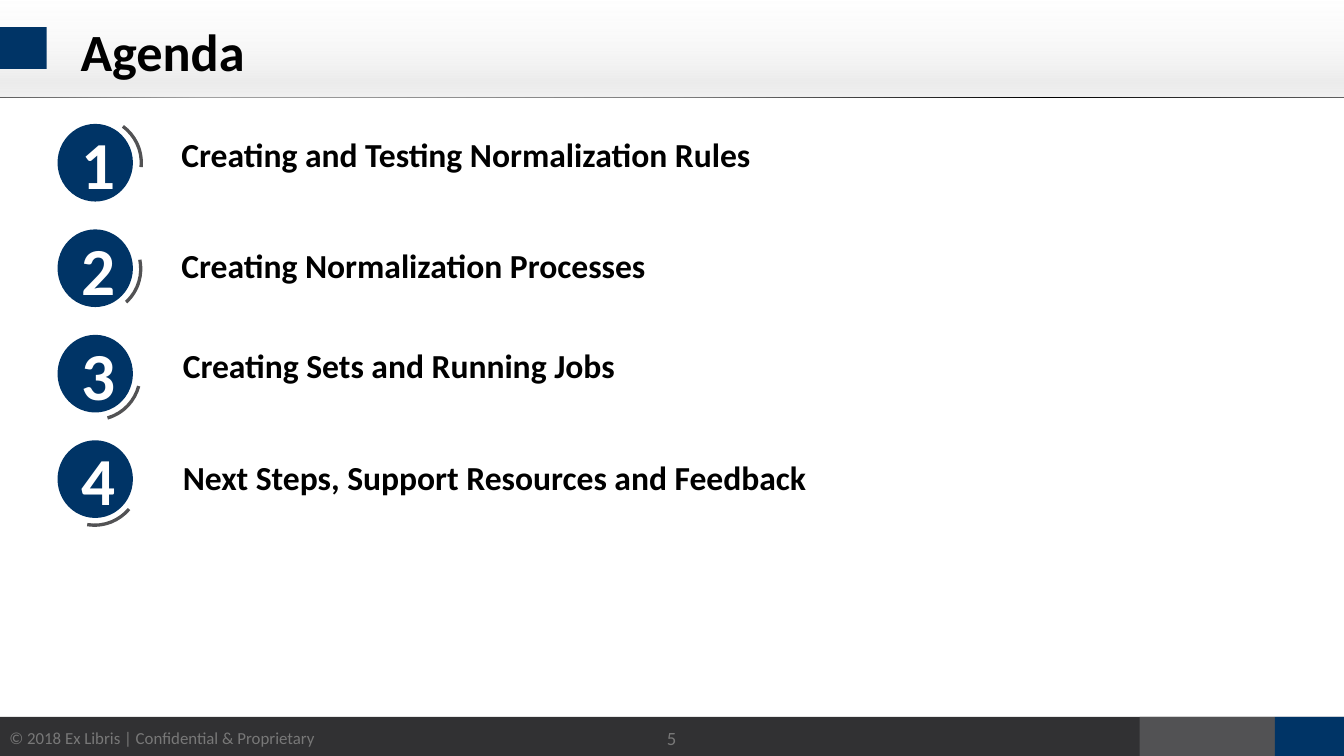
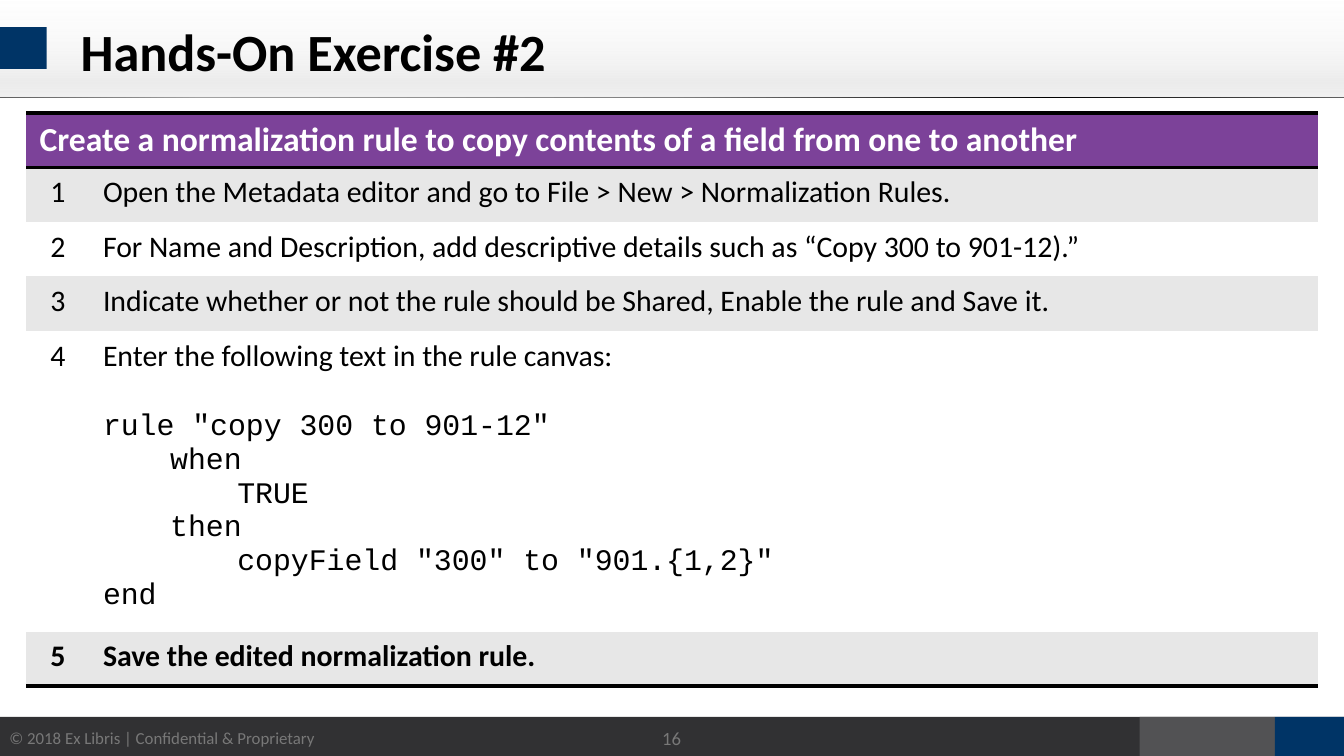
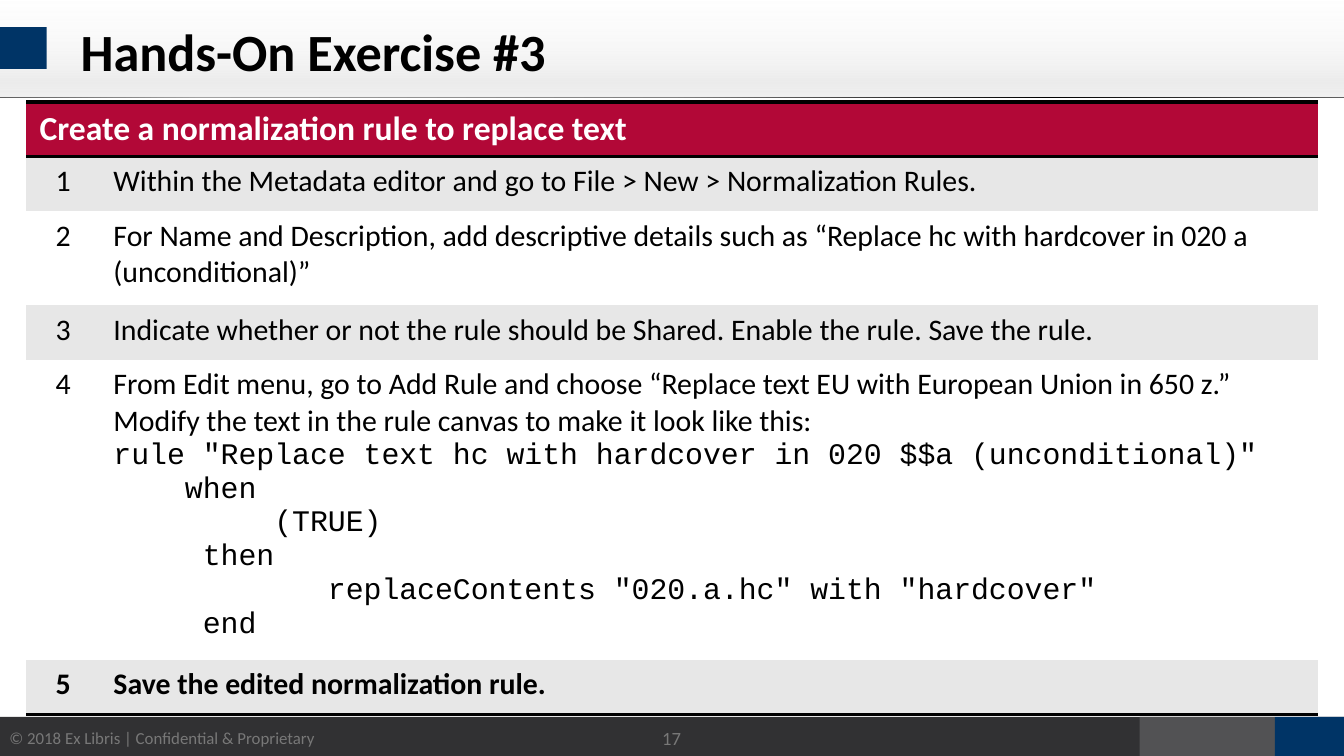
from lxml import etree
from pptx import Presentation
from pptx.dml.color import RGBColor
from pptx.enum.shapes import MSO_SHAPE
from pptx.enum.text import MSO_ANCHOR, MSO_AUTO_SIZE, PP_ALIGN
from pptx.oxml.ns import qn
from pptx.util import Pt

RECT, OVAL, ARC = MSO_SHAPE.RECTANGLE, MSO_SHAPE.OVAL, MSO_SHAPE.BLOCK_ARC
LEFT, CENTER = PP_ALIGN.LEFT, PP_ALIGN.CENTER
TOP, MIDDLE = MSO_ANCHOR.TOP, MSO_ANCHOR.MIDDLE
NO_FIT, GROW = MSO_AUTO_SIZE.NONE, MSO_AUTO_SIZE.SHAPE_TO_FIT_TEXT

SANS, MONO = "Calibri", "Courier New"
NAVY, CHARCOAL, GRAY, MUTED = "003466", "313133", "525254", "787878"
BLACK, WHITE, STRIPE = "000000", "FFFFFF", "E7E7E7"
PURPLE, CRIMSON = "7C4299", "B20837"
NO_TABLE_STYLE = "{2D5ABB26-0587-4C30-8999-92F81FD0307C}"

# Gradient stops: position %, colour, opacity %
HEADER_STOPS = [(0, "FAFAFA", 12), (66, "D7D7D7", 30),
                (83, "D7D7D7", 47), (100, "E4E4E4", 54)]
RULE_STOPS = [(0, "606060", 100), (22, BLACK, 100), (50, "808080", 100),
              (85, "A0A0A0", 100), (100, "606060", 100)]


def rgb(color):
    return RGBColor.from_string(color)


class Deck:
    def __init__(self):
        self.prs = Presentation()
        self.prs.slide_width, self.prs.slide_height = Pt(720), Pt(405)
        self.layout = self.prs.slide_layouts[5]
        self.s = None

    def slide(self, title, number):
        first = self.s is None
        self.s = self.prs.slides.add_slide(self.layout)
        if first:
            self.frame()
        sp = self.s.shapes.title
        sp.left, sp.top, sp.width, sp.height = Pt(36), Pt(4.5), Pt(653), Pt(45)
        tf = sp.text_frame
        tf.text = title
        tf.auto_size, tf.vertical_anchor = NO_FIT, MIDDLE
        self.style(tf.paragraphs[0], 28, BLACK, True)
        self.text(number, 338.5, 381, 42.5, 29, 10, MUTED, align=CENTER)

    def frame(self):
        """Draw the shared bands and footer, and hand them to the layout."""
        parts = [
            self.shape(RECT, 0, 384, 720, 23, CHARCOAL),
            self.shape(RECT, 610.5, 384, 72.5, 23, GRAY),
            self.shape(RECT, 683, 384, 37, 23, NAVY),
            self.gradient(self.shape(RECT, -0.5, 0.5, 721, 52), HEADER_STOPS, 90),
            self.shape(RECT, 0, 14.5, 25, 22.5, NAVY),
            self.gradient(self.shape(RECT, 0, 52, 720, 0.6), RULE_STOPS, 180),
        ]
        sp = self.text("© 2018 Ex Libris | Confidential & Proprietary",
                       -3, 386, 179.5, 18, 9, MUTED, align=CENTER)
        sp.text_frame.word_wrap, sp.text_frame.auto_size = False, GROW
        for i, part in enumerate(parts + [sp]):
            next(part._element.iter(qn("p:cNvPr"))).set("id", str(100 + i))
            self.layout.shapes._spTree.append(part._element)

    def style(self, p, size, color, bold=False, align=LEFT, font=SANS):
        p.alignment = align
        for r in p.runs:
            f = r.font
            f.name, f.size, f.bold = font, Pt(size), bold
            f.color.rgb = rgb(color)

    def shape(self, kind, x, y, w, h, fill=None):
        sp = self.s.shapes.add_shape(kind, Pt(x), Pt(y), Pt(w), Pt(h))
        sp.shadow.inherit = False
        sp.line.fill.background()
        if fill:
            sp.fill.solid()
            sp.fill.fore_color.rgb = rgb(fill)
        return sp

    def gradient(self, sp, stops, angle):
        grad = etree.Element(qn("a:gradFill"), rotWithShape="1")
        gs_list = etree.SubElement(grad, qn("a:gsLst"))
        for pos, color, opacity in stops:
            gs = etree.SubElement(gs_list, qn("a:gs"), pos=str(pos * 1000))
            clr = etree.SubElement(gs, qn("a:srgbClr"), val=color)
            etree.SubElement(clr, qn("a:alpha"), val=str(opacity * 1000))
        etree.SubElement(grad, qn("a:lin"), ang=str(angle * 60000), scaled="0")
        sp._element.spPr.find(qn("a:prstGeom")).addnext(grad)
        return sp

    def text(self, text, x, y, w, h, size, color, bold=False, align=LEFT, inset=None):
        sp = self.s.shapes.add_textbox(Pt(x), Pt(y), Pt(w), Pt(h))
        tf = sp.text_frame
        tf.text = text
        tf.word_wrap, tf.vertical_anchor = True, MIDDLE
        if inset is not None:
            tf.margin_left = tf.margin_right = Pt(inset)
            tf.margin_top = tf.margin_bottom = Pt(inset)
        self.style(tf.paragraphs[0], size, color, bold, align)
        return sp

    def badge(self, number, y, turn):
        """Numbered disc with a white rim and a short arc around it."""
        self.shape(OVAL, 27.4, y, 46.8, 47.5, WHITE)
        arc = self.shape(ARC, 25, y - 1.4, 51.6, 50.4, GRAY)
        for i, value in enumerate((181.725, 0.424, 0.035)):
            arc.adjustments[i] = value
        arc.rotation = turn
        disc = self.shape(OVAL, 30.8, y + 3.2, 40.4, 41.6, NAVY)
        disc.text_frame.text = str(number)
        self.style(disc.text_frame.paragraphs[0], 36, WHITE, True, CENTER)

    def border(self, cell, *sides):
        tc_pr = cell._tc.get_or_add_tcPr()
        for i, side in enumerate(sides):
            ln = etree.Element(qn("a:" + side), w=str(Pt(2)))
            fill = etree.SubElement(ln, qn("a:solidFill"))
            etree.SubElement(fill, qn("a:srgbClr"), val=BLACK)
            tc_pr.insert(i, ln)

    def cell(self, cell, text, fill, size=16, color=BLACK, bold=False, align=LEFT):
        cell.fill.solid()
        cell.fill.fore_color.rgb = rgb(fill)
        cell.vertical_anchor = TOP
        cell.text_frame.text = text
        self.style(cell.text_frame.paragraphs[0], size, color, bold, align)

    def code(self, cell, lines, gap):
        """Add code lines (level, text) below the cell's first paragraph."""
        for i, (level, line) in enumerate(lines):
            p = cell.text_frame.add_paragraph()
            p.text, p.level = line, level
            p._p.get_or_add_pPr().set("marL", str(Pt(36 * level)))
            p._p.get_or_add_pPr().set("indent", "0")
            if i == 0 and gap:
                p.space_before = Pt(gap)
            self.style(p, 16, BLACK, font=MONO)

    def exercise(self, heading, color, steps, code, y, number_width, heights, gap=0):
        """Table of numbered steps; the code belongs to the step before the last."""
        last = len(steps)
        tbl = self.s.shapes.add_table(last + 1, 2, Pt(14), Pt(y), Pt(692),
                                      Pt(sum(heights))).table
        tbl.first_row = tbl.horz_banding = False
        tbl._tbl.tblPr.find(qn("a:tableStyleId")).text = NO_TABLE_STYLE
        tbl.columns[0].width = Pt(number_width)
        tbl.columns[1].width = Pt(692 - number_width)
        for row, height in zip(tbl.rows, heights):
            row.height = Pt(height)
        self.cell(tbl.cell(0, 0), heading, color, 18, WHITE, True)
        tbl.cell(0, 0).merge(tbl.cell(0, 1))
        for n, step in enumerate(steps, 1):
            fill = STRIPE if n % 2 else WHITE
            self.cell(tbl.cell(n, 0), str(n), fill, bold=n == last, align=CENTER)
            self.cell(tbl.cell(n, 1), step, fill, bold=n == last)
        self.code(tbl.cell(last - 1, 1), code, gap)
        for col in range(2):
            self.border(tbl.cell(0, col), "lnT", "lnB")
            self.border(tbl.cell(last, col), "lnB")


def main():
    deck = Deck()

    # Agenda
    deck.slide("Agenda", "5")
    topics = [
        ("Creating and Testing Normalization Rules", 93.6, 66.2, 5.1),
        ("Creating Normalization Processes", 93.6, 125.3, 47),
        ("Creating Sets and Running Jobs", 94.3, 179.3, 73.5),
        ("Next Steps, Support Resources and Feedback", 94.3, 239, 98.8),
    ]
    for i, (topic, x, y, turn) in enumerate(topics):
        deck.badge(i + 1, 63.2 + 56.5 * i, turn)
        deck.text(topic, x, y, 572, 33, 18, BLACK, True, inset=3.6)

    # Exercise: copy a field
    deck.slide("Hands-On Exercise #2", "16")
    deck.exercise(
        "Create a normalization rule to copy contents of a field from one to another",
        PURPLE,
        ["Open the Metadata editor and go to File > New > Normalization Rules.",
         "For Name and Description, add descriptive details such as “Copy 300 to 901-12).”",
         "Indicate whether or not the rule should be Shared, Enable the rule and Save it.",
         "Enter the following text in the rule canvas:",
         "Save the edited normalization rule."],
        [(0, 'rule "copy 300 to 901-12"'),
         (1, "when"),
         (2, "TRUE"),
         (1, "then"),
         (2, 'copyField "300" to "901.{1,2}"'),
         (0, "end")],
        60.5, 34, [29.2, 29.2, 29.2, 29.2, 155.2, 29.2], gap=19.5)

    # Exercise: replace text
    deck.slide("Hands-On Exercise #3", "17")
    deck.exercise(
        "Create a normalization rule to replace text",
        CRIMSON,
        ["Within the Metadata editor and go to File > New > Normalization Rules.",
         "For Name and Description, add descriptive details such as "
         "“Replace hc with hardcover in 020 a (unconditional)”",
         "Indicate whether or not the rule should be Shared. Enable the rule. Save the rule.",
         "From Edit menu, go to Add Rule and choose “Replace text EU with European Union "
         "in 650 z.” Modify the text in the rule canvas to make it look like this:",
         "Save the edited normalization rule."],
        [(0, 'rule "Replace text hc with hardcover in 020 $$a (unconditional)"'),
         (0, "    when"),
         (0, "         (TRUE)"),
         (0, "     then"),
         (0, '            replaceContents "020.a.hc" with "hardcover"'),
         (0, "     end")],
        54.7, 39.6, [29.2, 29.2, 50.4, 29.2, 155, 29.2])

    deck.prs.save("out.pptx")


if __name__ == "__main__":
    main()
